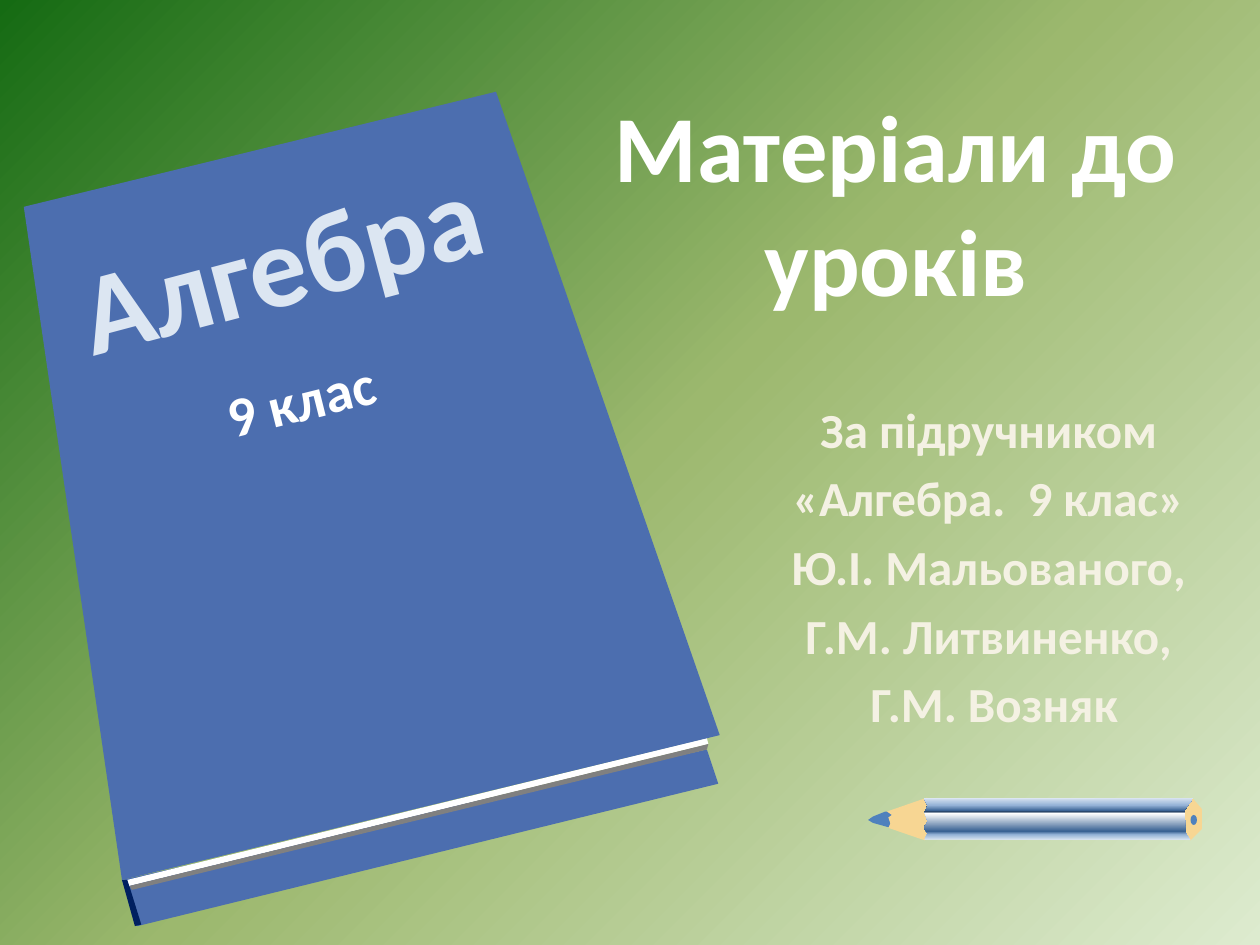
from lxml import etree
from pptx import Presentation
from pptx.dml.color import RGBColor
from pptx.enum.shapes import MSO_SHAPE
from pptx.enum.text import MSO_ANCHOR, MSO_AUTO_SIZE, PP_ALIGN
from pptx.oxml.ns import qn
from pptx.util import Cm, Pt

OVAL = MSO_SHAPE.OVAL
MIDDLE, TOP = MSO_ANCHOR.MIDDLE, MSO_ANCHOR.TOP
CENTER = PP_ALIGN.CENTER
NO_AUTOFIT = MSO_AUTO_SIZE.NONE

WHITE = RGBColor(0xFF, 0xFF, 0xFF)
CREAM = RGBColor(0xF4, 0xF1, 0xE3)
PALE_BLUE = RGBColor(0xDC, 0xE6, 0xF2)
COVER_BLUE = RGBColor(0x4C, 0x6E, 0xAF)
NAVY = RGBColor(0x00, 0x20, 0x60)
GREY = RGBColor(0x80, 0x80, 0x80)
LEAD_BLUE = RGBColor(0x4F, 0x81, 0xBD)
WOOD = RGBColor(0xF7, 0xD6, 0x93)
SKY_BLUE = RGBColor(0x95, 0xB3, 0xD7)
STEEL_BLUE = RGBColor(0x37, 0x60, 0x92)
DARK_BLUE = RGBColor(0x25, 0x40, 0x61)
LIGHT_GREEN = RGBColor(0xDD, 0xEB, 0xCF)
MID_GREEN = RGBColor(0x9C, 0xB8, 0x6E)
DARK_GREEN = RGBColor(0x15, 0x6B, 0x13)

BACKGROUND_STOPS = [(0, LIGHT_GREEN), (50, MID_GREEN), (100, DARK_GREEN)]
PENCIL_STOPS = [
    (0, PALE_BLUE), (13, SKY_BLUE), (21, STEEL_BLUE), (63, WHITE),
    (67, DARK_BLUE), (69, STEEL_BLUE), (82, SKY_BLUE), (100, PALE_BLUE),
]


def set_gradient(fill, element, stops, angle):
    """Fill with (percent, colour) stops; element is the XML holding the fill."""
    fill.gradient()
    fill.gradient_angle = angle
    stop_list = next(element.iter(qn("a:gsLst")))
    for old_stop in list(stop_list):
        stop_list.remove(old_stop)
    for percent, color in stops:
        stop = etree.SubElement(stop_list, qn("a:gs"), pos=str(percent * 1000))
        etree.SubElement(stop, qn("a:srgbClr"), val=str(color))


def add_outline(page, points, color=None):
    """Add a closed polygon with corners in centimetres."""
    corners = [(Cm(x), Cm(y)) for x, y in points]
    builder = page.shapes.build_freeform(*corners[0])
    builder.add_line_segments(corners[1:], close=True)
    shape = builder.convert_to_shape()
    shape.shadow.inherit = False
    shape.line.fill.background()
    if color is not None:
        shape.fill.solid()
        shape.fill.fore_color.rgb = color
    return shape


deck = Presentation()
deck.slide_width, deck.slide_height = Cm(25.4), Cm(19.05)
page = deck.slides.add_slide(deck.slide_layouts[0])
set_gradient(page.background.fill, page._element, BACKGROUND_STOPS, 135)

# Book, from the back cover to the front cover
book_parts = [
    (COVER_BLUE, [(2.46, 17.74), (2.77, 18.67), (14.48, 15.8), (14.25, 15.11)]),
    (NAVY, [(2.46, 17.74), (2.57, 17.74), (2.85, 18.64), (2.72, 18.67)]),
    (WHITE, [(2.57, 17.74), (14.25, 14.88), (14.28, 15), (2.61, 17.86)]),
    (GREY, [(2.61, 17.86), (14.28, 15), (14.25, 15.11), (2.66, 17.94)]),
    (COVER_BLUE, [(0.48, 4.17), (10, 1.85), (14.51, 14.82), (2.46, 17.74)]),
]
for color, points in book_parts:
    add_outline(page, points, color)

# Pencil
pencil_parts = [
    (LEAD_BLUE, [(18.01, 16.36), (17.85, 16.36), (17.6, 16.46), (17.5, 16.53),
                 (17.6, 16.59), (18.03, 16.71), (18, 16.5)]),
    (WOOD, [(18.69, 16.08), (17.88, 16.36), (17.98, 16.43), (17.91, 16.48),
            (17.95, 16.6), (17.91, 16.69), (18.64, 16.94), (18.9, 16.76),
            (18.87, 16.46)]),
    (WOOD, [(24.05, 16.1), (24.23, 16.31), (24.23, 16.71), (24, 16.94),
            (23.8, 16.74), (23.8, 16.26)]),
]
for color, points in pencil_parts:
    add_outline(page, points, color)
barrel = add_outline(page, [
    (18.62, 16.08), (18.7, 16.24), (18.64, 16.38), (18.7, 16.56),
    (18.62, 16.69), (18.7, 16.8), (18.64, 16.92), (24, 16.94),
    (23.9, 16.79), (23.88, 16.33), (24.05, 16.1),
])
set_gradient(barrel.fill, barrel._element, PENCIL_STOPS, 90)
core = page.shapes.add_shape(OVAL, Cm(24), Cm(16.43), Cm(0.13), Cm(0.2))
core.shadow.inherit = False
core.fill.solid()
core.fill.fore_color.rgb = LEAD_BLUE
core.line.fill.background()

# Cover lettering
cover_texts = [
    ("Алгебра", (1.24, 3.68, 9.02, 2.87), 345.1, 66, PALE_BLUE),
    ("9 клас", (4.29, 7.04, 5.16, 1.63), 345.9, 32, WHITE),
]
for text, place, rotation, size, color in cover_texts:
    box = page.shapes.add_textbox(*map(Cm, place))
    box.rotation = rotation
    box.text_frame.word_wrap = False
    span = box.text_frame.paragraphs[0].add_run()
    span.text = text
    font_format = {"name": "Calibri", "size": Pt(size), "bold": True}
    for name, value in font_format.items():
        setattr(span.font, name, value)
    span.font.color.rgb = color

# Title and subtitle
subtitle_lines = [
    "За підручником ",
    "«Алгебра.  9 клас» ",
    "Ю.І. Мальованого, ",
    "Г.М. Литвиненко, ",
    "Г.М. Возняк",
]
placeholder_texts = [
    (page.shapes.title, ["Матеріали до уроків"],
     (10.72, 1.78, 14.68, 4.57), MIDDLE, 54, WHITE),
    (page.placeholders[1], subtitle_lines,
     (14.68, 7.92, 10.72, 7.34), TOP, 28, CREAM),
]
for box, lines, place, anchor, size, color in placeholder_texts:
    box.left, box.top, box.width, box.height = map(Cm, place)
    frame = box.text_frame
    frame.text = "\n".join(lines)
    frame_format = {
        "word_wrap": True, "auto_size": NO_AUTOFIT, "vertical_anchor": anchor,
    }
    for name, value in frame_format.items():
        setattr(frame, name, value)
    font_format = {"name": "Calibri", "size": Pt(size), "bold": True}
    for para in frame.paragraphs:
        para.alignment = CENTER
        span = para.runs[0]
        for name, value in font_format.items():
            setattr(span.font, name, value)
        span.font.color.rgb = color

deck.save("out.pptx")
